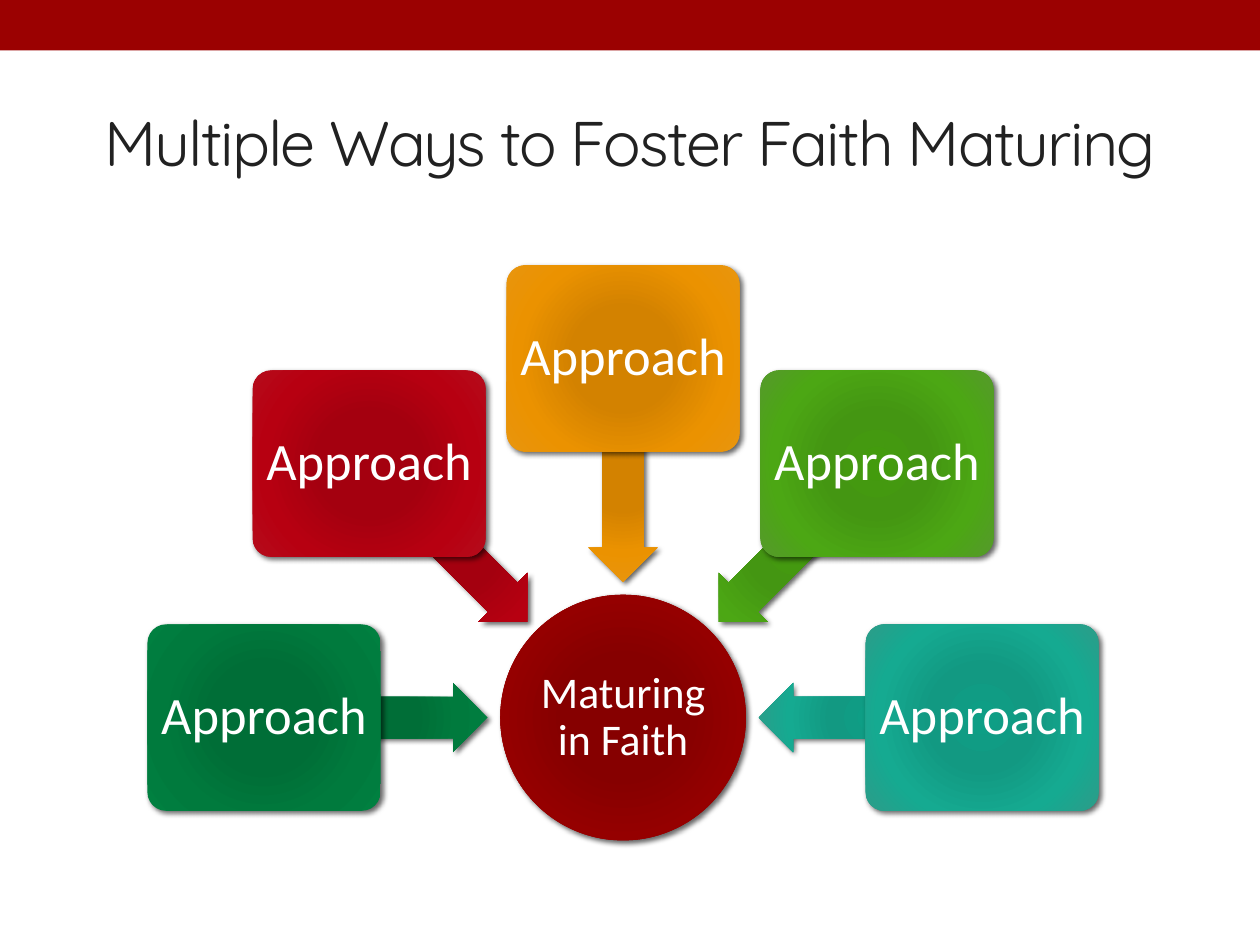
from math import cos, radians, sin

from lxml.etree import SubElement
from pptx import Presentation
from pptx.dml.color import RGBColor
from pptx.enum.shapes import MSO_SHAPE
from pptx.enum.text import MSO_ANCHOR, MSO_AUTO_SIZE, PP_ALIGN
from pptx.oxml.ns import qn
from pptx.util import Inches, Pt

SLIDE_W, SLIDE_H = 10, 7.5
BAND = RGBColor(0x9B, 0x01, 0x01)
INK = RGBColor(0x21, 0x21, 0x21)
WHITE = RGBColor(0xFF, 0xFF, 0xFF)
BLACK = RGBColor(0x00, 0x00, 0x00)


def shades(*codes):
    return [RGBColor.from_string(code) for code in codes]


STOPS = (0, 34, 70, 100)  # percent from the centre outwards
HUB_SHADES = shades("860000", "860000", "950000", "9B0101")
APPROACH_SHADES = [
    shades("006E37", "006E37", "007A3D", "008040"),
    shades("A4000F", "A4000F", "B70011", "B50B1B"),
    shades("D38200", "D38200", "EB9200", "E8950E"),
    shades("439B0D", "449612", "4CA714", "55992B"),
    shades("0E9E85", "129982", "15AA91", "2C9C89"),
]

HUB_X, HUB_Y = 4.945, 5.695
HUB_SIZE = 1.95
BOX_W, BOX_H, BOX_RADIUS = 1.85, 1.48, 2.85
ARROW_W, ARROW_H, ARROW_RADIUS = 1.78, 0.55, 1.965
FIRST_ANGLE, ANGLE_STEP = 180, 45  # clockwise from the right


def set_all(target, values):
    for name, value in values.items():
        setattr(target, name, value)


def write(shape, words, size, face, color, inset=None):
    frame = shape.text_frame
    frame.text = words
    set_all(frame, {"word_wrap": True, "auto_size": MSO_AUTO_SIZE.NONE,
                    "vertical_anchor": MSO_ANCHOR.MIDDLE})
    if inset is not None:
        sides = ("left", "top", "right", "bottom")
        set_all(frame, {f"margin_{side}": Inches(inset) for side in sides})
    paragraph = frame.paragraphs[0]
    paragraph.alignment = PP_ALIGN.CENTER
    font = paragraph.runs[0].font
    set_all(font, {"size": Pt(size), "name": face})
    font.color.rgb = color
    return paragraph


def fill_radial(shape, colors):
    shape.fill.background()
    properties = shape.element.spPr
    gradient = properties.makeelement(qn("a:gradFill"), {"rotWithShape": "1"})
    stop_list = SubElement(gradient, qn("a:gsLst"))
    for percent, color in zip(STOPS, colors):
        stop = SubElement(stop_list, qn("a:gs"), pos=str(percent * 1000))
        SubElement(stop, qn("a:srgbClr"), val=str(color))
    circle = SubElement(gradient, qn("a:path"), {"path": "circle"})
    SubElement(circle, qn("a:fillToRect"), dict.fromkeys("ltrb", "100000"))
    properties.replace(properties.find(qn("a:noFill")), gradient)


def cast_shadow(shape):
    shape.shadow.inherit = False
    effects = shape.element.spPr.find(qn("a:effectLst"))
    shadow = SubElement(effects, qn("a:outerShdw"), {
        "blurRad": str(Pt(3)), "dist": str(Pt(2)),
        "dir": str(45 * 60000), "rotWithShape": "0"})
    color = SubElement(shadow, qn("a:srgbClr"), val=str(BLACK))
    SubElement(color, qn("a:alpha"), val="60000")


def add_centred(slide, kind, center, width, height, colors):
    x, y = center
    shape = slide.shapes.add_shape(
        kind, Inches(x - width / 2), Inches(y - height / 2),
        Inches(width), Inches(height))
    shape.line.fill.background()
    fill_radial(shape, colors)
    cast_shadow(shape)
    return shape


def around_hub(angle, radius):
    turn = radians(angle)
    return HUB_X + radius * cos(turn), HUB_Y + radius * sin(turn)


def add_band(slide):
    band = slide.shapes.add_shape(
        MSO_SHAPE.RECTANGLE, 0, 0, Inches(SLIDE_W), Inches(0.4))
    band.shadow.inherit = False
    band.fill.solid()
    band.fill.fore_color.rgb = BAND
    band.line.fill.background()


def add_title(slide, words):
    title = slide.shapes.title
    set_all(title, {"left": Inches(0.5), "top": Inches(0.58),
                    "width": Inches(9), "height": Inches(1.08)})
    paragraph = write(title, words, 36, "Quicksand", INK)
    paragraph.runs[0].font._element.set("spc", "-100")


def add_hub(slide, words):
    hub = add_centred(slide, MSO_SHAPE.OVAL, (HUB_X, HUB_Y),
                      HUB_SIZE, HUB_SIZE, HUB_SHADES)
    write(hub, words, 25, "Calibri", WHITE, 0.02).line_spacing = 0.9


def add_approach(slide, words, angle, colors):
    """Add a box on the arc with its arrow pointing at the hub."""
    arrow = add_centred(slide, MSO_SHAPE.LEFT_ARROW,
                        around_hub(angle, ARROW_RADIUS),
                        ARROW_W, ARROW_H, colors)
    arrow.rotation = angle % 360
    arrow.adjustments[0] = 0.6
    box = add_centred(slide, MSO_SHAPE.ROUNDED_RECTANGLE,
                      around_hub(angle, BOX_RADIUS), BOX_W, BOX_H, colors)
    box.adjustments[0] = 0.1
    write(box, words, 30, "Calibri", WHITE, 0.06).line_spacing = 0.9


def main():
    deck = Presentation()
    set_all(deck, {"slide_width": Inches(SLIDE_W),
                   "slide_height": Inches(SLIDE_H)})
    slide = deck.slides.add_slide(deck.slide_layouts[5])
    add_band(slide)
    add_title(slide, "Multiple Ways to Foster Faith Maturing")
    add_hub(slide, "Maturing in Faith")
    for index, colors in enumerate(APPROACH_SHADES):
        add_approach(slide, "Approach", FIRST_ANGLE + index * ANGLE_STEP, colors)
    deck.save("out.pptx")


if __name__ == "__main__":
    main()
